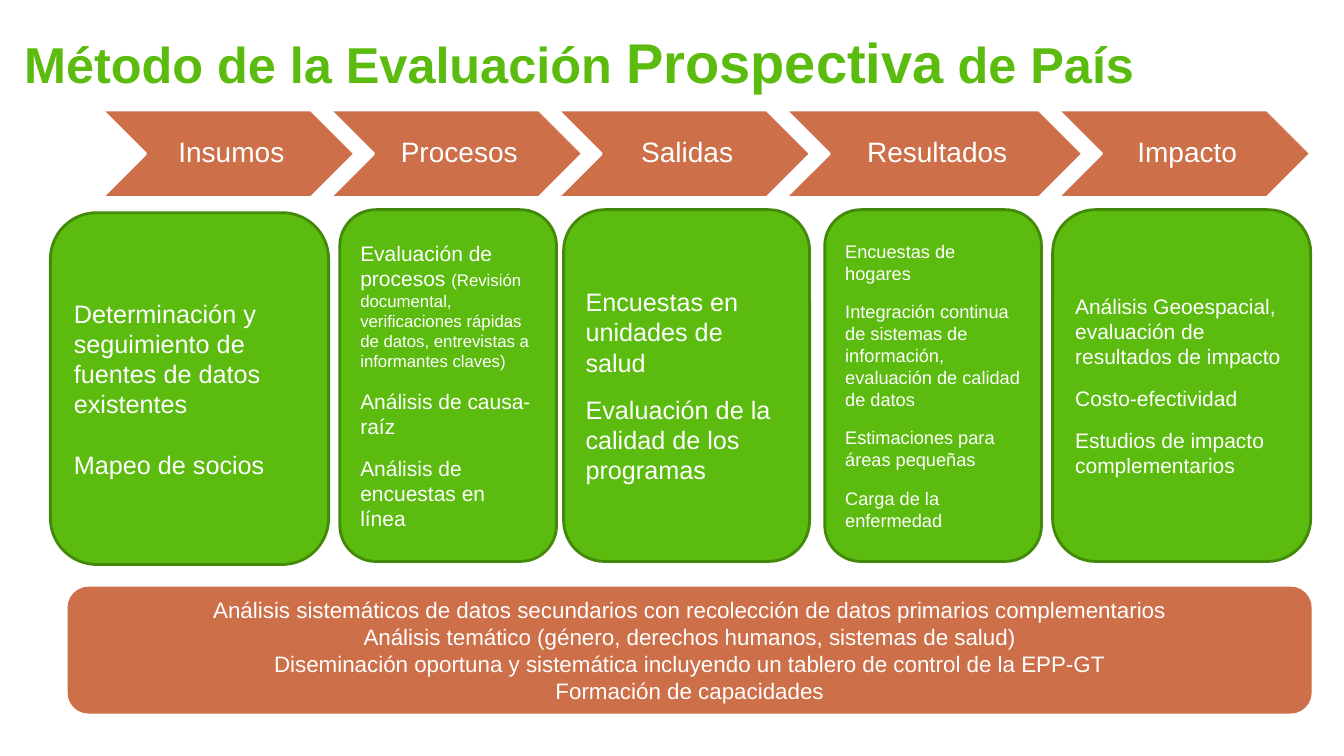
from dataclasses import dataclass

from pptx import Presentation
from pptx.dml.color import RGBColor
from pptx.enum import shapes, text
from pptx.util import Inches, Pt


@dataclass(frozen=True)
class Theme:
    font: str = "Arial"
    green: str = "5BBB0E"
    dark_green: str = "438A0A"
    orange: str = "CD6F49"
    white: str = "FFFFFF"
    title: int = 36
    title_accent: int = 40
    stage: int = 20
    summary: int = 16
    large: int = 18
    medium: int = 15
    small: int = 13
    note: int = 12


THEME = Theme()

TITLE = [("Método de la Evaluación ", THEME.title),
         ("Prospectiva", THEME.title_accent),
         (" de País", THEME.title)]

# Stage name, chevron width
STAGES = [("Insumos", 2.51), ("Procesos", 2.51), ("Salidas", 2.51),
          ("Resultados", 2.95), ("Impacto", 2.51)]
STAGE_OVERLAP = 0.25

# Left, top, width, text size, space after, paragraphs
METHODS = [
    (0.5, 2.11, 2.76, THEME.large, 21.5, [
        "Determinación y seguimiento de fuentes de datos existentes",
        "Mapeo de socios"]),
    (3.37, 2.08, 2.15, THEME.medium, 12, [
        [("Evaluación de procesos ", THEME.medium),
         ("(Revisión documental, verificaciones rápidas de datos, "
          "entrevistas a informantes claves)", THEME.note)],
        "Análisis de causa-raíz",
        "Análisis de encuestas en línea"]),
    (5.59, 2.08, 2.44, THEME.large, 12, [
        "Encuestas en unidades de salud",
        "Evaluación de la calidad de los programas"]),
    (8.18, 2.08, 2.15, THEME.small, 12, [
        "Encuestas de hogares",
        "Integración continua de sistemas de información, "
        "evaluación de calidad de datos",
        "Estimaciones para áreas pequeñas",
        "Carga de la enfermedad"]),
    (10.44, 2.08, 2.56, THEME.medium, 12, [
        "Análisis Geoespacial, evaluación de resultados de impacto",
        "Costo-efectividad",
        "Estudios de impacto complementarios"]),
]

SUMMARY = [
    "Análisis sistemáticos de datos secundarios con recolección de datos "
    "primarios complementarios",
    "Análisis temático (género, derechos humanos, sistemas de salud)",
    "Diseminación oportuna y sistemática incluyendo un tablero de control "
    "de la EPP-GT",
    "Formación de capacidades",
]


def write(frame, paragraphs, *, size, color=THEME.white, bold=False,
          align=text.PP_ALIGN.LEFT, after=0, spacing=None):
    """Fill a frame; a paragraph is a string or a list of (string, size)."""
    frame.word_wrap = True
    frame.vertical_anchor = text.MSO_ANCHOR.MIDDLE
    for index, content in enumerate(paragraphs):
        paragraph = frame.paragraphs[0] if index == 0 else frame.add_paragraph()
        paragraph.alignment = align
        paragraph.space_before = Pt(0)
        paragraph.space_after = Pt(after)
        paragraph.line_spacing = spacing
        runs = [(content, size)] if isinstance(content, str) else content
        for words, run_size in runs:
            run = paragraph.add_run()
            run.text = words
            run.font.name = THEME.font
            run.font.size = Pt(run_size)
            run.font.bold = bold
            run.font.color.rgb = RGBColor.from_string(color)


def add_block(slide, kind, left, top, width, height, fill, outline=None):
    block = slide.shapes.add_shape(
        kind, Inches(left), Inches(top), Inches(width), Inches(height))
    block.shadow.inherit = False
    block.fill.solid()
    block.fill.fore_color.rgb = RGBColor.from_string(fill)
    if outline:
        block.line.color.rgb = RGBColor.from_string(outline)
        block.line.width = Pt(2)
    else:
        block.line.fill.background()
    return block


def add_title(slide):
    title = slide.shapes.title
    title.left, title.top = Inches(0.14), Inches(0.18)
    title.width, title.height = Inches(13.1), Inches(0.86)
    write(title.text_frame, [TITLE], size=THEME.title, color=THEME.green,
          bold=True)


def add_stages(slide):
    left = 1.01
    for name, width in STAGES:
        chevron = add_block(slide, shapes.MSO_SHAPE.CHEVRON, left, 1.09, width,
                            0.87, THEME.orange, THEME.white)
        frame = chevron.text_frame
        frame.margin_left = Inches(0.09)
        frame.margin_right = frame.margin_top = frame.margin_bottom = Inches(0.03)
        write(frame, [name], size=THEME.stage, align=text.PP_ALIGN.CENTER,
              spacing=0.9)
        left += width - STAGE_OVERLAP


def add_methods(slide):
    for left, top, width, size, after, paragraphs in METHODS:
        card = add_block(slide, shapes.MSO_SHAPE.ROUNDED_RECTANGLE, left, top,
                         width, 3.49, THEME.green, THEME.dark_green)
        write(card.text_frame, paragraphs, size=size, after=after)


def add_summary(slide):
    band = add_block(slide, shapes.MSO_SHAPE.ROUNDED_RECTANGLE, 0.67, 5.82,
                     12.34, 1.26, THEME.orange)
    write(band.text_frame, SUMMARY, size=THEME.summary,
          align=text.PP_ALIGN.CENTER)


def main():
    deck = Presentation()
    deck.slide_width, deck.slide_height = Inches(13.33), Inches(7.5)
    slide = deck.slides.add_slide(deck.slide_layouts[5])
    add_title(slide)
    add_stages(slide)
    add_methods(slide)
    add_summary(slide)
    deck.save("out.pptx")


if __name__ == "__main__":
    main()
